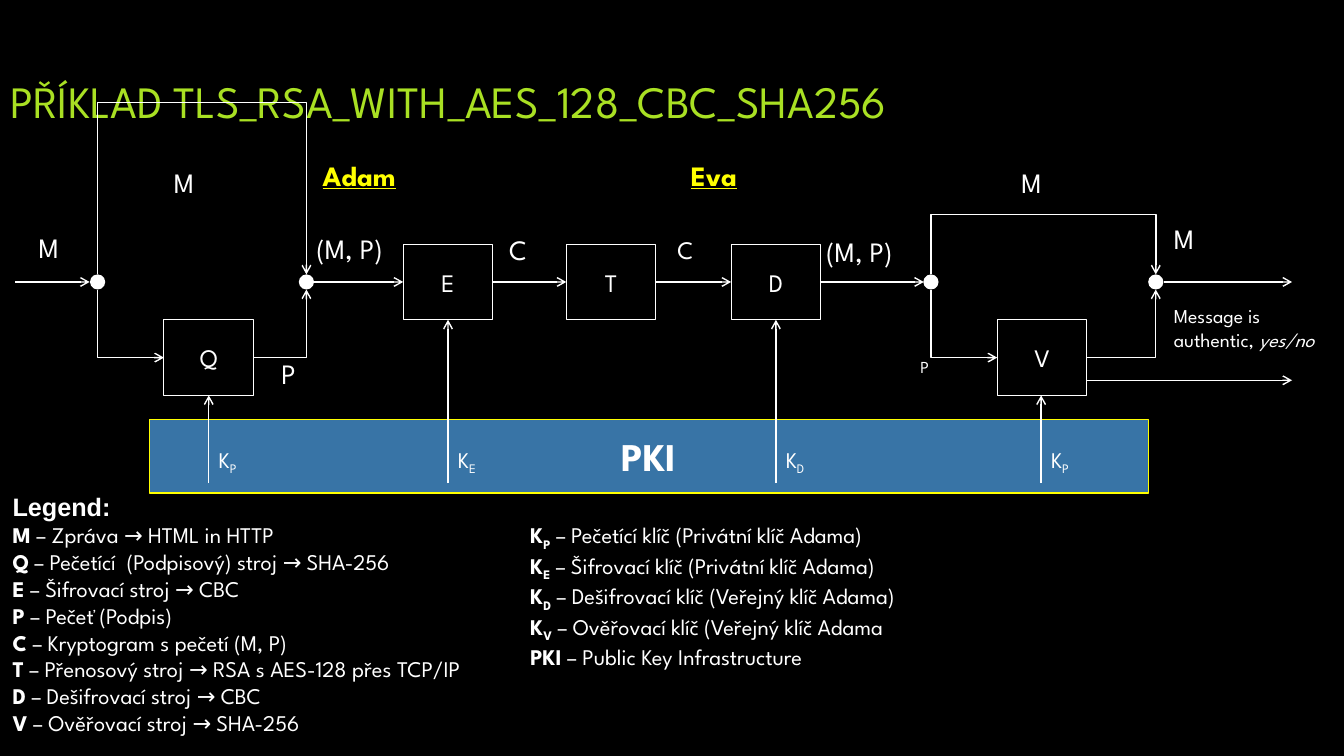
from pptx import Presentation, util as u
from pptx.dml.color import RGBColor
from pptx.enum import shapes as kinds, text as tx
from pptx.oxml import ns, xmlchemy as xml

deck = Presentation()
deck.slide_width, deck.slide_height = u.Inches(13.33), u.Inches(7.5)
COL, ROW = deck.slide_width / 15, deck.slide_height / 10
FONT, WHITE, YELLOW = "League Spartan", "FFFFFF", "FFFF00"
hue = RGBColor.from_string
slide = deck.slides.add_slide(deck.slide_layouts[5])
slide.background.fill.solid()
slide.background.fill.fore_color.rgb = hue("000000")


def write(shape, lines, size=16, ink=WHITE, align="LEFT", anchor="TOP", wrap=True):
    """Each line is a list of (text, flags): b bold, i italic, u underline, _ subscript, a Arial."""
    frame = shape.text_frame
    frame.word_wrap = wrap
    frame.vertical_anchor = tx.MSO_ANCHOR[anchor]
    for n, line in enumerate(lines):
        para = frame.add_paragraph() if n else frame.paragraphs[0]
        para.alignment = tx.PP_ALIGN[align]
        for words, flags in line:
            run = para.add_run()
            run.text = words
            font = run.font
            font.name = "Arial" if "a" in flags else FONT
            font.size = u.Pt(18 if "a" in flags else size)
            font.color.rgb = hue(ink)
            font.bold, font.italic, font.underline = ("b" in flags, "i" in flags, "u" in flags)
            if "_" in flags:
                run._r.get_or_add_rPr().set("baseline", "-25000")


def arrow(*cells):
    """Arrow through points given in columns and rows."""
    pts = [(int(x * COL), int(y * ROW)) for x, y in cells]
    if len(pts) == 2:
        wire = slide.shapes.add_connector(kinds.MSO_CONNECTOR.STRAIGHT, *pts[0], *pts[1])
    else:
        pen = slide.shapes.build_freeform(*pts[0])
        pen.add_line_segments(pts[1:], close=False)
        wire = pen.convert_to_shape()
        wire.fill.background()
    wire.line.color.rgb = hue(WHITE)
    wire.line.width = u.Pt(1)
    tip = xml.OxmlElement("a:tailEnd")
    tip.set("type", "arrow")
    form = wire._element.spPr
    form.find(ns.qn("a:ln")).append(tip)
    form.append(xml.OxmlElement("a:effectLst"))


# Title
title = slide.shapes.title
title.left, title.top = 0, int(0.89 * ROW)
title.width, title.height = deck.slide_width, int(0.87 * ROW)
write(title, [[("PŘÍKLAD TLS_RSA_WITH_AES_128_CBC_SHA256", "")]],
      size=32, ink="A9E023", anchor="MIDDLE")

# Key band, machines and nodes: name, left, top, width, height, fill, line
MID, LOW, TOP, BASE = 3.73, 4.73, 3.23, 6.39
NODES = [1.09, 3.42, 10.39, 12.9]
parts = [("PKI", 1.67, 5.55, 11.15, 0.97, "3874A6", YELLOW)]
parts += [(name, x, y, 1, 1, None, WHITE) for name, x, y in [
    ("Q", 1.83, TOP + 1), ("E", 4.5, TOP), ("T", 6.32, TOP),
    ("D", 8.16, TOP), ("V", 11.13, TOP + 1)]]
parts += [("", x - 0.085, MID - 0.1, 0.17, 0.2, WHITE, None) for x in NODES]
for name, x, y, w, h, fill, edge in parts:
    kind = kinds.MSO_SHAPE.RECTANGLE if name else kinds.MSO_SHAPE.OVAL
    part = slide.shapes.add_shape(
        kind, int(x * COL), int(y * ROW), int(w * COL), int(h * ROW))
    part.shadow.inherit = False
    if fill:
        part.fill.solid()
        part.fill.fore_color.rgb = hue(fill)
    else:
        part.fill.background()
    if edge:
        part.line.color.rgb = hue(edge)
        part.line.width = u.Pt(1 if fill else 0.75)
    else:
        part.line.fill.background()
    if name:
        band = name == "PKI"
        write(part, [[(name, "b" if band else "")]], size=28 if band else 18,
              align="CENTER", anchor="MIDDLE")

# Straight flow along the middle row
for a, b in [(0.17, 1.0), (3.5, 4.5), (5.5, 6.32), (7.32, 8.16), (9.16, 10.31), (12.99, 14.42)]:
    arrow((a, MID), (b, MID))
arrow((12.13, 5.03), (14.42, 5.03))

# Branches over and under each pair of nodes
for a, b, peak, box in [(*NODES[:2], 1.36, 1.83), (*NODES[2:], 2.84, 11.13)]:
    arrow((a, MID - 0.1), (a, peak), (b, peak), (b, MID - 0.1))
    arrow((a, MID + 0.1), (a, LOW), (box, LOW))
    arrow((box + 1, LOW), (b, LOW), (b, MID + 0.1))

# Keys rising from the band, then all labels: runs, left, top, width, size, ink, wrap
labels = []
for key, x, end in [("P", 2.33, 5.23), ("E", 5, 4.23), ("D", 8.66, 4.23), ("P", 11.62, 5.23)]:
    arrow((x, BASE), (x, end))
    labels.append(([("K", ""), (key, "_")], x, 5.83, 0.48, 16, WHITE, False))
labels += [([(name, "")], x, y, w, size, WHITE, False) for name, x, y, w, size in [
    ("M", 0.32, 2.99, 0.52, 20), ("M", 1.83, 2.13, 0.52, 20),
    ("M", 11.29, 2.13, 0.52, 20), ("M", 12.99, 2.87, 0.52, 20),
    ("(M, P)", 3.42, 3, 1.11, 20), ("(M, P)", 9.11, 3.04, 1.11, 20),
    ("C", 5.57, 3.01, 0.48, 20), ("C", 7.45, 3.04, 0.46, 18),
    ("P", 3.03, 4.65, 0.42, 20), ("P", 10.16, 4.65, 0.57, 12)]]
labels += [([(name, "bu")], x, 2.03, 1.35, 20, YELLOW, True)
           for name, x in [("Adam", 3.49), ("Eva", 7.6)]]
labels.append(([("Message is authentic, ", ""), ("yes/no", "i")],
               12.99, 3.96, 2.01, 14, WHITE, True))
for runs, x, y, w, size, ink, wrap in labels:
    label = slide.shapes.add_textbox(
        int(x * COL), int(y * ROW), int(w * COL), int(0.59 * ROW))
    write(label, [runs], size=size, ink=ink, wrap=wrap)

# Legend in two columns
terms = [[("Legend:", "ba")]] + [[(sign, "b"), (" – " + note, "")] for sign, note in [
    ("M", "Zpráva → HTML in HTTP"),
    ("Q", "Pečetící  (Podpisový) stroj → SHA-256"),
    ("E", "Šifrovací stroj → CBC"),
    ("P", "Pečeť (Podpis)"),
    ("C", "Kryptogram s pečetí (M, P)"),
    ("T", "Přenosový stroj → RSA s AES-128 přes TCP/IP"),
    ("D", "Dešifrovací stroj → CBC"),
    ("V", "Ověřovací stroj → SHA-256")]]
keys = [[("K", "b"), (sign, "b_"), (" – " + note, "")] for sign, note in [
    ("P", "Pečetící klíč (Privátní klíč Adama)"),
    ("E", "Šifrovací klíč (Privátní klíč Adama)"),
    ("D", "Dešifrovací klíč (Veřejný klíč Adama)"),
    ("V", "Ověřovací klíč (Veřejný klíč Adama")]]
keys.append([("PKI", "b"), (" – Public Key Infrastructure", "")])
for lines, x, y, w, h in [(terms, 0.03, 6.43, 6.29, 3.41), (keys, 5.81, 6.83, 6.82, 2.19)]:
    box = slide.shapes.add_textbox(
        int(x * COL), int(y * ROW), int(w * COL), int(h * ROW))
    write(box, lines)

deck.save("out.pptx")
